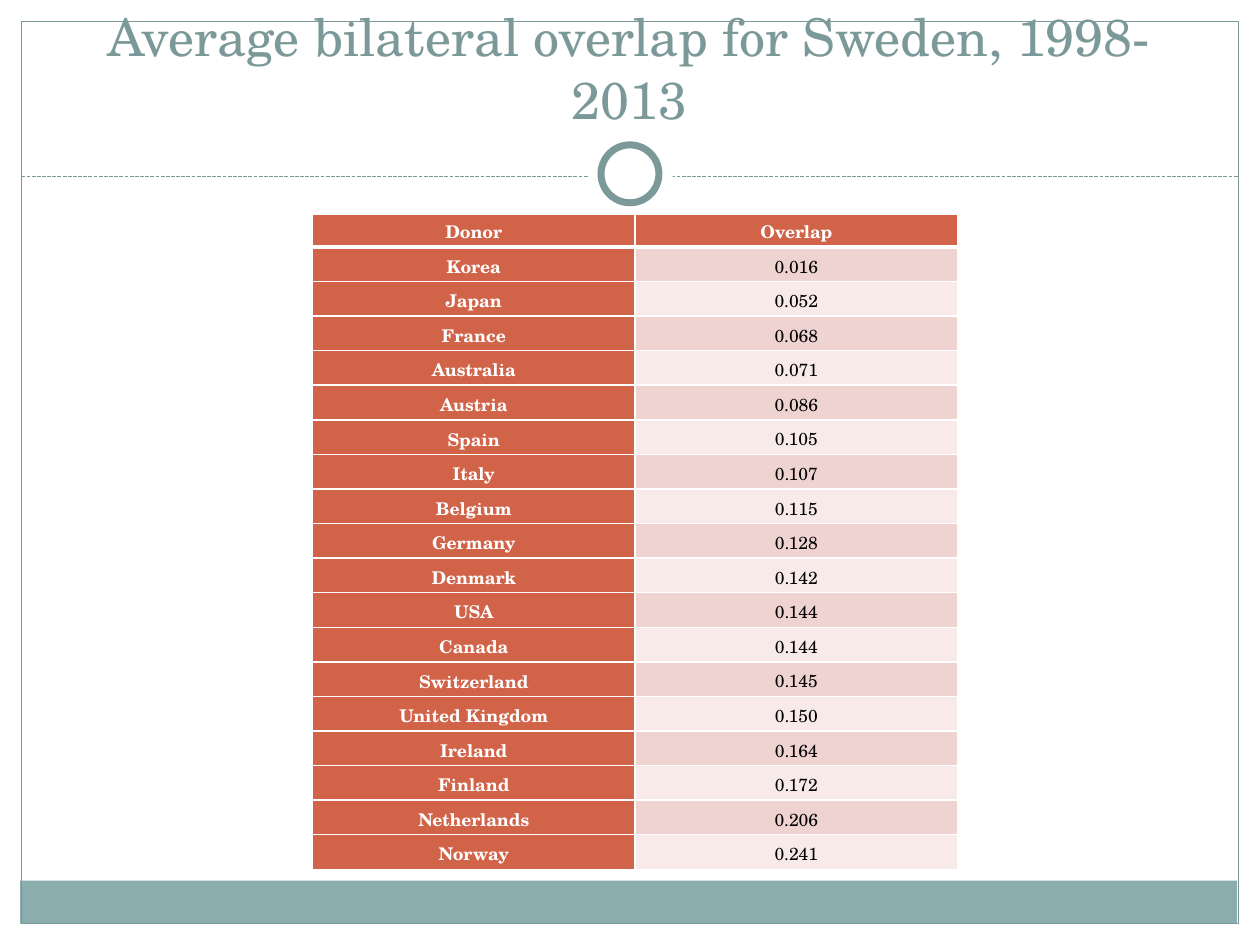
from lxml import etree
from pptx import Presentation
from pptx.dml.color import RGBColor
from pptx.enum.dml import MSO_LINE
from pptx.enum.shapes import MSO_CONNECTOR, MSO_SHAPE
from pptx.enum.text import MSO_ANCHOR, PP_ALIGN
from pptx.oxml.ns import qn
from pptx.util import Inches, Pt

RECT, OVAL = MSO_SHAPE.RECTANGLE, MSO_SHAPE.OVAL
STRAIGHT, DASH = MSO_CONNECTOR.STRAIGHT, MSO_LINE.SQUARE_DOT
TOP, MIDDLE, BOTTOM = MSO_ANCHOR.TOP, MSO_ANCHOR.MIDDLE, MSO_ANCHOR.BOTTOM

FONT = "TeX Gyre Schola"
COLORS = {
    "white": "FFFFFF", "black": "000000", "frame": "7C999A", "footer": "8CADAE",
    "accent": "D16349", "band_dark": "EED3D0", "band_light": "F7EAE9",
}

TITLE = "Average bilateral overlap for Sweden, 1998-2013"
HEADER = ("Donor", "Overlap")
OVERLAPS = [
    ("Korea", "0.016"), ("Japan", "0.052"), ("France", "0.068"),
    ("Australia", "0.071"), ("Austria", "0.086"), ("Spain", "0.105"),
    ("Italy", "0.107"), ("Belgium", "0.115"), ("Germany", "0.128"),
    ("Denmark", "0.142"), ("USA", "0.144"), ("Canada", "0.144"),
    ("Switzerland", "0.145"), ("United Kingdom", "0.150"), ("Ireland", "0.164"),
    ("Finland", "0.172"), ("Netherlands", "0.206"), ("Norway", "0.241"),
]

# preset, (left, top, width, height), fill, line colour, line width
FRAME = [
    (RECT, (0.16, 6.99, 9.66, 0.34), "footer", None, 0),
    (RECT, (0.17, 0.17, 9.66, 7.16), None, "frame", 0.75),
]
RING = [
    (OVAL, (4.67, 1.05, 0.67, 0.67), "white", None, 0),
    (OVAL, (4.77, 1.15, 0.46, 0.46), "white", "frame", 4),
]
DIVIDER = (0.17, 1.4, 9.83, 1.4)
TITLE_BOX = (0.33, 0.25, 9.33, 0.83)
TABLE_BOX = (2.48, 1.7, 5.12, 5.2)
HEADER_HEIGHT = 0.26


def rgb(name):
    return RGBColor.from_string(COLORS[name])


def inches(values):
    return [Inches(v) for v in values]


def write(tf, text, size=10, color="black", bold=False, spacing=None):
    p = tf.paragraphs[0]
    p.alignment = PP_ALIGN.CENTER
    if spacing:
        p.line_spacing = spacing
    r = p.add_run()
    r.text = text
    r.font.name = FONT
    r.font.size = Pt(size)
    r.font.bold = bold
    r.font.color.rgb = rgb(color)


def add_shape(s, preset, box, fill, line, width):
    sp = s.shapes.add_shape(preset, *inches(box))
    sp.shadow.inherit = False
    if fill:
        sp.fill.solid()
        sp.fill.fore_color.rgb = rgb(fill)
    else:
        sp.fill.background()
    if line:
        sp.line.color.rgb = rgb(line)
        sp.line.width = Pt(width)
    else:
        sp.line.fill.background()


def add_divider(s):
    line = s.shapes.add_connector(STRAIGHT, *inches(DIVIDER))
    line.line.color.rgb = rgb("frame")
    line.line.width = Pt(0.75)
    line.line.dash_style = DASH
    etree.SubElement(line._element.spPr, qn("a:effectLst"))


def add_title(s):
    tf = s.shapes.add_textbox(*inches(TITLE_BOX)).text_frame
    tf.word_wrap = True
    tf.vertical_anchor = BOTTOM
    write(tf, TITLE, size=29.7, color="frame")


def set_borders(cell, widths):
    """Draw white borders; widths maps the side tags to points."""
    tc_pr = cell._tc.get_or_add_tcPr()
    for i, (side, width) in enumerate(widths.items()):
        ln = etree.Element(qn(f"a:{side}"), w=str(Pt(width)))
        fill = etree.SubElement(ln, qn("a:solidFill"))
        etree.SubElement(fill, qn("a:srgbClr"), val=COLORS["white"])
        tc_pr.insert(i, ln)


def add_overlap_table(s):
    rows = [HEADER] + OVERLAPS
    table = s.shapes.add_table(len(rows), len(HEADER), *inches(TABLE_BOX)).table
    for col in table.columns:
        col.width = Inches(TABLE_BOX[2] / len(HEADER))
    body_height = (TABLE_BOX[3] - HEADER_HEIGHT) / len(OVERLAPS)
    for i, row in enumerate(rows):
        table.rows[i].height = Inches(body_height if i else HEADER_HEIGHT)
        for j, text in enumerate(row):
            cell = table.cell(i, j)
            label = i == 0 or j == 0
            band = "band_dark" if i % 2 else "band_light"
            cell.fill.solid()
            cell.fill.fore_color.rgb = rgb("accent" if label else band)
            cell.margin_left = cell.margin_right = Inches(0.05)
            cell.margin_top = cell.margin_bottom = 0
            cell.vertical_anchor = MIDDLE if i else TOP
            write(cell.text_frame, text, color="white" if label else "black",
                  bold=label, spacing=1.15)
            set_borders(cell, {"lnL": 1, "lnR": 1, "lnT": 3 if i == 1 else 1,
                               "lnB": 1 if i else 3})


def main():
    prs = Presentation()
    prs.slide_width, prs.slide_height = Inches(10), Inches(7.5)
    s = prs.slides.add_slide(prs.slide_layouts[6])
    for item in FRAME:
        add_shape(s, *item)
    add_divider(s)
    for item in RING:
        add_shape(s, *item)
    add_title(s)
    add_overlap_table(s)
    prs.save("out.pptx")


if __name__ == "__main__":
    main()
